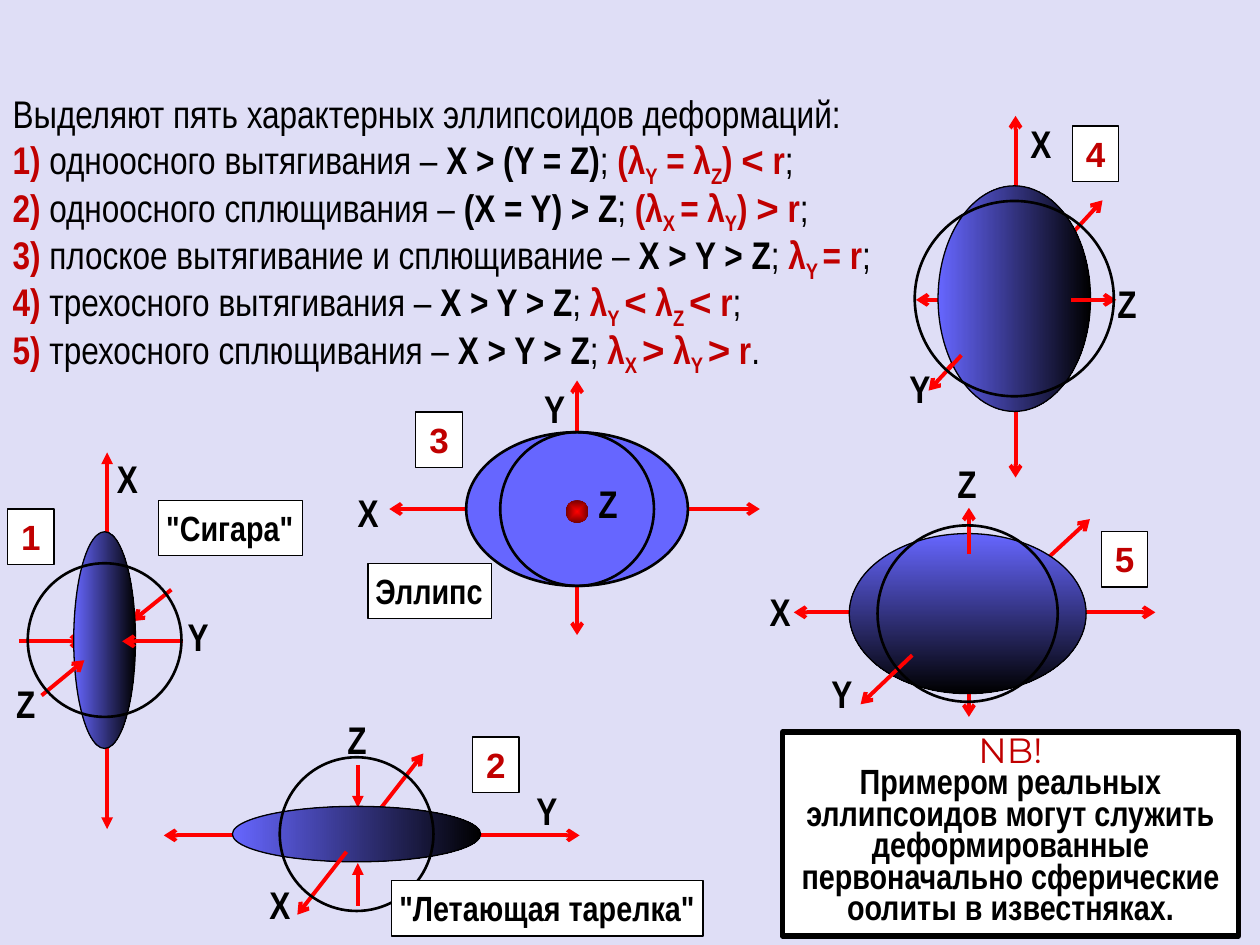
"""Build a slide on the five typical strain ellipsoids."""
from itertools import groupby

from lxml import etree
from pptx import Presentation, util as u
from pptx.dml.color import RGBColor
from pptx.enum import shapes as sh, text as tx
from pptx.oxml.ns import qn

COLS, ROWS, CELL = 100, 75, 0.1
BLACK, WHITE, RED, BLUE = "000000", "FFFFFF", "FF0000", "6666FF"
DARK, WINE, PALE = "C00000", "760000", "DFDEF6"
SLIM = "Arial Narrow"
ENDS = {"a": "arrow", "t": "triangle"}

TITLE = "Выделяют пять характерных эллипсоидов деформаций:"
KINDS = [
    ("одноосного вытягивания", "X > (Y = Z)", "(λ|Y| = λ|Z|) < r", ";"),
    ("одноосного сплющивания", "(X = Y) > Z", "(λ|X |= λ|Y|) > r", ";"),
    ("плоское вытягивание и сплющивание", "X > Y > Z", "λ|Y |= r", ";"),
    ("трехосного вытягивания", "X > Y > Z", "λ|Y |< λ|Z |< r", ";"),
    ("трехосного сплющивания", "X > Y > Z", "λ|X |> λ|Y |> r", "."),
]
FIGS = [
    dict(mid=(8.3, 50.8), body=(4.9, 17.2), ball=(12.2, 12.2), turn=0,
         back=[(0.2, -14.9, 0.2, 15, "tt"), (-6.8, 0.1, -1.7, 0.1, "a"),
               (5.3, -4, 2.2, -1.5, "a")],
         front=[(-5, 4.4, -1.6, 1.6, "a"), (6.2, 0.1, 1.4, 0.1, "a")],
         axes=[(0, -15.2), (5.6, -2.6), (-8, 2.7)], num=(-7.7, -10.4)),
    dict(mid=(28.3, 66.2), body=(19.7, 4.4), ball=(12.2, 12.2), turn=0,
         back=[(0.1, -5.5, 0.1, -2.1, "t"), (-15.3, 0.1, 17.7, 0.1, "aa"),
               (1.8, -1.9, 5.3, -6.4, "a")],
         front=[(-0.8, 1.4, -4.7, 6.4, "a"), (0.1, 5.7, 0.1, 2.3, "t")],
         axes=[(-7.9, 3.2), (13.3, -4.2), (-1.7, -9.9)], num=(9.2, -7.7)),
    dict(mid=(45.8, 40.4), body=(17.6, 12.2), ball=(12.2, 12.2), turn=None,
         back=[(0, 10, 0, -10.2, "aa"), (-14.9, 0, 14.5, 0, "aa")], front=[],
         axes=[(-18.4, -2.1), (-3.6, -10.3), (0.7, -2.8)], num=(-12.8, -7.7)),
    dict(mid=(80.5, 23.7), body=(12.1, 17.9), ball=(15.8, 15.5), turn=0,
         back=[(0.1, 14.2, 0.1, -14.5, "aa"), (-5.3, 5.6, 7, -7.8, "a"),
               (4.4, 0.1, -7.8, 0.1, "a")],
         front=[(4.5, 0.1, 8.1, 0.1, "a"), (-4.2, 4.5, -6.8, 7.3, "a")],
         axes=[(0.3, -14.7), (-9.3, 4.8), (7.2, -2)], num=(4.6, -13.7)),
    dict(mid=(76.8, 48.7), body=(18.8, 12.7), ball=(14.3, 14), turn=270,
         back=[(14.9, -0.1, -13.8, -0.1, "aa"), (5.6, -3.7, 9.7, -7.5, "a"),
               (0.1, -4.6, 0.1, 8.2, "a")],
         front=[(0.1, -4.7, 0.1, -8.4, "a"), (-4.4, 3.3, -8.5, 7.2, "a")],
         axes=[(-16.7, -2.5), (-11.8, 4), (-1.8, -12.7)], num=(10.6, -6.5)),
]
TAGS = [('"Сигара"', 12.6, 39.7, 11.4), ('"Летающая тарелка"', 31.1, 69.9, 24.7),
        ("Эллипс", 29.2, 44.7, 9.8)]
NOTE = ("Примером реальных эллипсоидов могут служить деформированные "
        "первоначально сферические оолиты в известняках.")


def rgb(code):
    """Turn a hex string into a colour."""
    return RGBColor.from_string(code)


def grid(*cells):
    """Turn grid cells into lengths."""
    return [u.Inches(c * CELL) for c in cells]


def say(para, words, size=22, color=BLACK, bold=True, font=SLIM, sub=False):
    """Add one formatted run to a paragraph."""
    run = para.add_run()
    run.text = words
    face = run.font
    face.size, face.bold, face.name = u.Pt(size), bold, font
    face.color.rgb = rgb(color)
    if sub:
        run._r.get_or_add_rPr().set("baseline", "-25000")


def frame(shape, wrap=False, side=0.1):
    """Prepare the text frame of a shape."""
    area = shape.text_frame
    area.word_wrap = wrap
    area.vertical_anchor = tx.MSO_ANCHOR.TOP
    area.margin_left = area.margin_right = u.Inches(side)
    return area


def form(home, kind, place, fill=None, edge=0.75):
    """Add a preset shape with a plain fill and a black edge."""
    item = home.add_shape(kind, *grid(*place))
    item.shadow.inherit = False
    if fill:
        item.fill.solid()
        item.fill.fore_color.rgb = rgb(fill)
    else:
        item.fill.background()
    if edge:
        item.line.color.rgb = rgb(BLACK)
        item.line.width = u.Pt(edge)
    else:
        item.line.fill.background()
    return item


def oval(home, mid, size, **look):
    """Add an ellipse around a centre."""
    place = [m - s / 2 for m, s in zip(mid, size)]
    return form(home, sh.MSO_SHAPE.OVAL, (*place, *size), **look)


def shade(item, first, last, turn=0):
    """Fill a shape with a gradient of two colours."""
    item.fill.gradient()
    item.fill.gradient_angle = turn
    for stop, code, spot in zip(item.fill.gradient_stops, (first, last), (0, 1)):
        stop.color.rgb, stop.position = rgb(code), spot


def glow(item):
    """Make the gradient of a shape run from its centre."""
    fill = item._element.spPr.find(qn("a:gradFill"))
    fill.remove(fill.find(qn("a:lin")))
    way = etree.SubElement(fill, qn("a:path"), {"path": "shape"})
    etree.SubElement(way, qn("a:fillToRect"), dict.fromkeys("ltrb", "50000"))


def arrow(home, mid, x1, y1, x2, y2, ends):
    """Add a red arrow, with two heads if two ends are given."""
    x, y = mid
    spots = grid(x + x1, y + y1, x + x2, y + y2)
    item = home.add_connector(sh.MSO_CONNECTOR.STRAIGHT, *spots)
    item.line.color.rgb = rgb(RED)
    item.line.width = u.Pt(2.25)
    props = item._element.spPr
    for name, end in zip(("a:tailEnd", "a:headEnd")[:len(ends)][::-1], ends):
        etree.SubElement(props.find(qn("a:ln")), qn(name), {"type": ENDS[end]})
    etree.SubElement(props, qn("a:effectLst"))


def draw(home, num, fig):
    """Draw one ellipsoid with its arrows, sphere, axes and number."""
    mid = x, y = fig["mid"]
    plain = fig["turn"] is None
    for line in fig["back"]:
        arrow(home, mid, *line)
    body = oval(home, mid, fig["body"], fill=BLUE, edge=1.5 if plain else 0.75)
    if not plain:
        shade(body, BLUE, BLACK, fig["turn"])
    for line in fig["front"]:
        arrow(home, mid, *line)
    oval(home, mid, fig["ball"], edge=1.5)
    if plain:
        dot = oval(home, (x, y + 0.2), (1.8, 1.8), edge=0)
        shade(dot, RED, WINE)
        glow(dot)
    for name, (dx, dy) in zip("XYZ", fig["axes"]):
        label = home.add_textbox(*grid(x + dx, y + dy, 3.7, 4.7))
        say(frame(label).paragraphs[0], name)
    dx, dy = fig["num"]
    box = form(home, sh.MSO_SHAPE.RECTANGLE, (x + dx, y + dy, 3.7, 4.4), fill=WHITE)
    para = frame(box).paragraphs[0]
    para.alignment = tx.PP_ALIGN.CENTER
    say(para, str(num), size=20, color=DARK, font="Arial")


def rules(home):
    """Write the list of kinds with their formulas."""
    area = frame(home.add_textbox(*grid(0.8, 7.1, 71.8, 21)), wrap=True, side=0.02)
    para = area.paragraphs[0]
    para.line_spacing = 0.9
    say(para, TITLE, bold=False)
    for num, (name, order, formula, stop) in enumerate(KINDS, 1):
        para = area.add_paragraph()
        para.line_spacing = 0.9
        say(para, f"{num})", color=DARK)
        say(para, f" {name} – ", bold=False)
        say(para, order)
        say(para, "; ", bold=False)
        for i, part in enumerate(formula.split("|")):
            for sign, run in groupby(part, lambda c: c in "<>"):
                say(para, "".join(run), color=DARK, sub=i % 2 == 1,
                    font="Arial" if sign else SLIM)
        say(para, stop, bold=False)


def main():
    """Build and save the slide."""
    deck = Presentation()
    deck.slide_width, deck.slide_height = grid(COLS, ROWS)
    slide = deck.slides.add_slide(deck.slide_layouts[6])
    slide.background.fill.solid()
    slide.background.fill.fore_color.rgb = rgb(PALE)
    home = slide.shapes
    rules(home)
    for num, fig in enumerate(FIGS, 1):
        draw(home.add_group_shape().shapes, num, fig)
    rect = sh.MSO_SHAPE.RECTANGLE
    for words, x, y, wide in TAGS:
        tag = form(home, rect, (x, y, wide, 4.4), fill=WHITE)
        para = frame(tag, side=0.06).paragraphs[0]
        para.alignment = tx.PP_ALIGN.LEFT
        say(para, words, size=20)
    area = frame(form(home, rect, (62.1, 58.1, 36.2, 16.2), fill=WHITE, edge=3), wrap=True)
    say(area.paragraphs[0], "NB!", size=20, color=DARK, bold=False, font="Montserrat")
    say(area.add_paragraph(), NOTE, size=20)
    for para in area.paragraphs:
        para.alignment, para.line_spacing = tx.PP_ALIGN.CENTER, 0.75
    deck.save("out.pptx")


if __name__ == "__main__":
    main()
